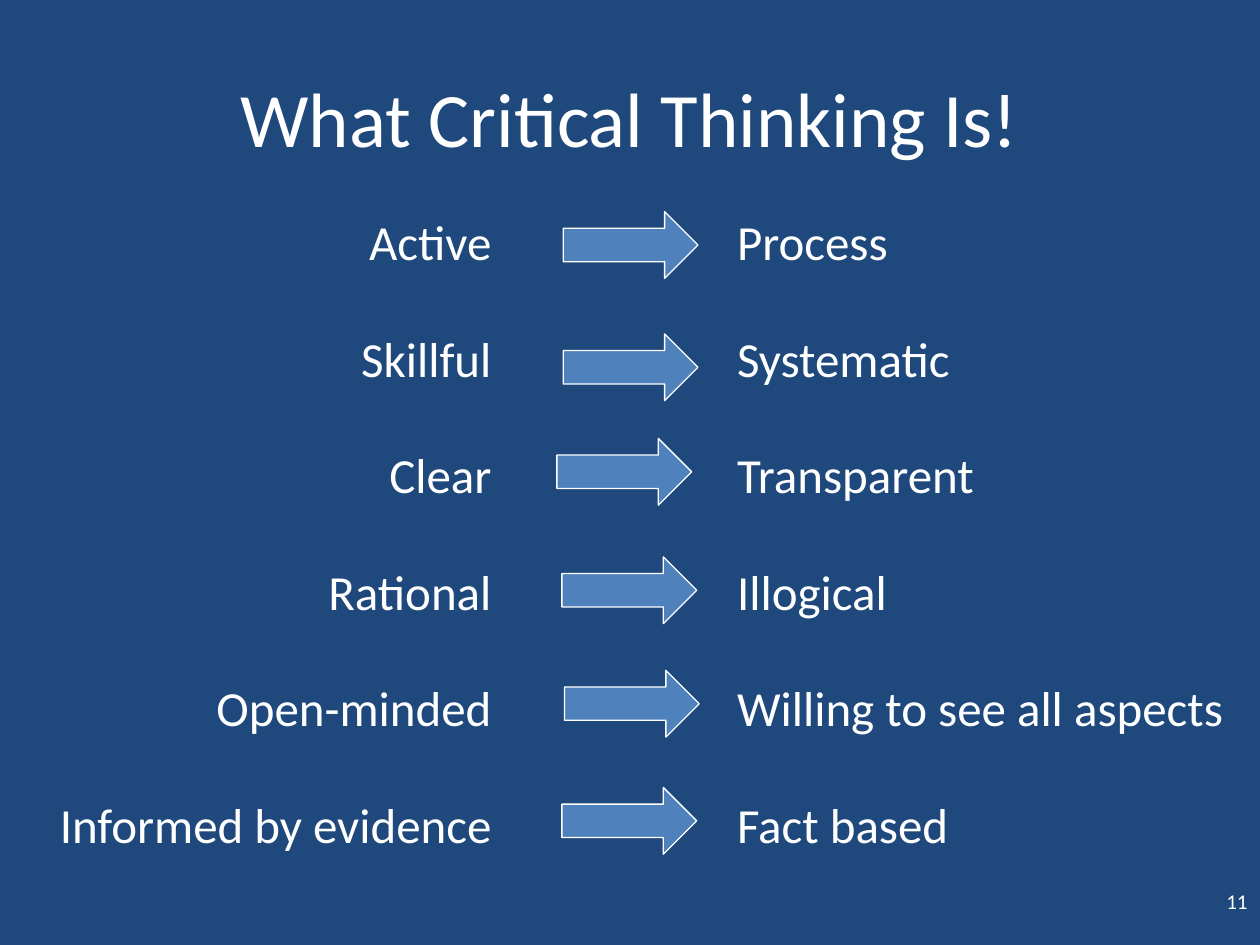
from pptx import Presentation
from pptx.dml.color import RGBColor
from pptx.enum.shapes import MSO_SHAPE as Preset
from pptx.enum.text import MSO_ANCHOR as Anchor, MSO_AUTO_SIZE as AutoSize, PP_ALIGN as Align
from pptx.util import Inches, Pt

NAVY = RGBColor(0x1F, 0x49, 0x7D)
BLUE = RGBColor(0x4F, 0x81, 0xBD)
WHITE = RGBColor(0xFF, 0xFF, 0xFF)
FONT = "Calibri"

PAIRS = [
    ("Active", "Process"),
    ("Skillful", "Systematic"),
    ("Clear", "Transparent"),
    ("Rational", "Illogical"),
    ("Open-minded", "Willing to see all aspects"),
    ("Informed by evidence", "Fact based"),
]
# Each arrow is set by hand beside its pair: left, top
ARROW_PLACES = [(4.47, 1.68), (4.47, 2.65), (4.42, 3.48),
                (4.46, 4.42), (4.48, 5.32), (4.46, 6.25)]


def place(shape, box):
    shape.left, shape.top, shape.width, shape.height = (Inches(n) for n in box)


def write(shape, *lines, size, align=Align.LEFT, anchor=Anchor.TOP, gap=0):
    """Write one unbulleted paragraph per line, with gap points after each."""
    frame = shape.text_frame
    frame.word_wrap = True
    frame.auto_size = AutoSize.NONE
    frame.vertical_anchor = anchor
    frame.text = "\n".join(lines)
    for paragraph in frame.paragraphs:
        paragraph.alignment = align
        paragraph.space_before = Pt(0)
        paragraph.space_after = Pt(gap)
        properties = paragraph._p.get_or_add_pPr()
        properties.set("marL", "0")
        properties.set("indent", "0")
        properties.insert_element_before(
            properties.makeelement(
                "{http://schemas.openxmlformats.org/drawingml/2006/main}buNone", {}),
            "a:tabLst", "a:defRPr", "a:extLst")
        font = paragraph.runs[0].font
        font.name, font.size, font.color.rgb = FONT, Pt(size), WHITE


def add_title(slide, box):
    place(slide.shapes.title, box)
    write(slide.shapes.title, "What Critical Thinking Is!", size=44,
          align=Align.CENTER, anchor=Anchor.MIDDLE)


def fill_column(placeholder, box, lines, align):
    place(placeholder, box)
    placeholder.text_frame.margin_top = Inches(0.08)
    write(placeholder, *lines, size=28, align=align, gap=33)


def add_arrow(slide, box):
    arrow = slide.shapes.add_shape(Preset.RIGHT_ARROW, *(Inches(n) for n in box))
    arrow.shadow.inherit = False
    arrow.fill.solid()
    arrow.fill.fore_color.rgb = BLUE
    arrow.line.color.rgb = WHITE
    arrow.line.width = Pt(0.75)


def add_page_number(slide, box):
    number = slide.shapes.add_textbox(*(Inches(n) for n in box))
    write(number, "11", size=12, align=Align.RIGHT, anchor=Anchor.MIDDLE)


def main():
    presentation = Presentation()
    presentation.slide_width, presentation.slide_height = Inches(10), Inches(7.5)
    slide = presentation.slides.add_slide(
        presentation.slide_layouts.get_by_name("Two Content"))
    slide.background.fill.solid()
    slide.background.fill.fore_color.rgb = NAVY

    # Title and the two columns of terms
    add_title(slide, (0.5, 0.3, 9, 1.25))
    qualities, meanings = zip(*PAIRS)
    fill_column(slide.placeholders[1], (-0.42, 1.6, 4.42, 4.08), qualities, Align.RIGHT)
    fill_column(slide.placeholders[2], (5.75, 1.6, 4.5, 5.25), meanings, Align.LEFT)

    # Page number and arrows between the columns
    add_page_number(slide, (7.67, 6.95, 2.33, 0.4))
    for left, top in ARROW_PLACES:
        add_arrow(slide, (left, top, 1.07, 0.53))

    presentation.save("out.pptx")


if __name__ == "__main__":
    main()
